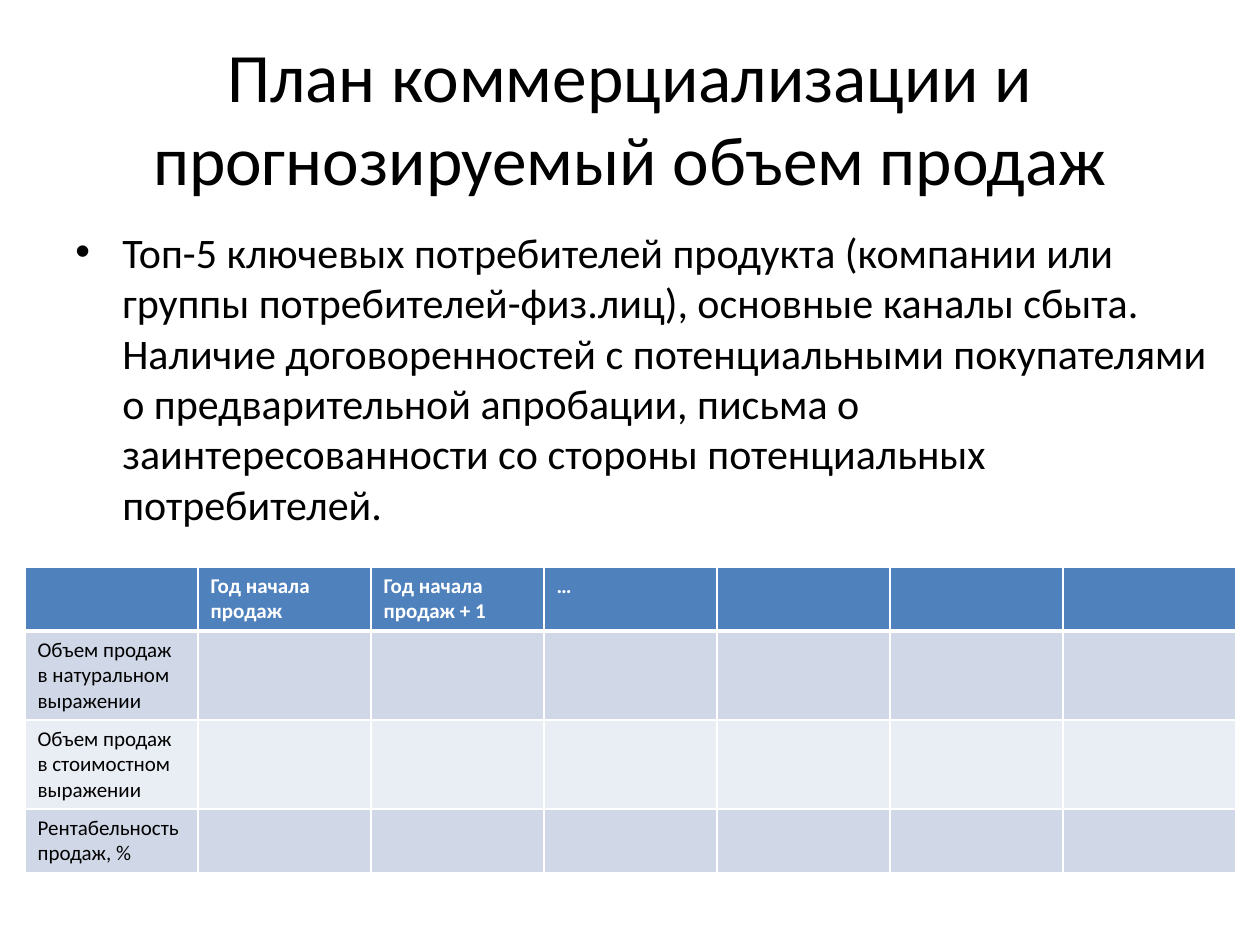
"""Build the commercialization plan slide with its sales forecast table."""
import dataclasses

import lxml.etree
import pptx
import pptx.dml.color
import pptx.enum.text
import pptx.oxml.ns
import pptx.util

EMU_PER_PX = 914400 / 126
COLUMN_COUNT = 7
TITLE = "План коммерциализации и прогнозируемый объем продаж"
BODY = (
    "Топ-5 ключевых потребителей продукта (компании или группы потребителей-физ.лиц), "
    "основные каналы сбыта. Наличие договоренностей с потенциальными покупателями "
    "о предварительной апробации, письма о заинтересованности со стороны "
    "потенциальных потребителей."
)
FORECAST = [
    ["", "Год начала продаж", "Год начала продаж + 1", "…"],
    ["Объем продаж в натуральном выражении"],
    ["Объем продаж в стоимостном выражении"],
    ["Рентабельность продаж, %"],
]
ROW_HEIGHTS = [64, 89, 89, 64]


@dataclasses.dataclass(frozen=True)
class Theme:
    font: str = "Calibri"
    text: str = "000000"
    light: str = "FFFFFF"
    header: str = "4F81BD"
    bands: tuple = ("D0D8E8", "E9EDF4")
    title_size: float = 39.6
    body_size: float = 24
    table_size: float = 12
    border: float = 1
    header_border: float = 3


def px(length):
    return pptx.util.Emu(round(length * EMU_PER_PX))


def rgb(color):
    return pptx.dml.color.RGBColor.from_string(color)


def add_child(parent, tag, **attributes):
    return lxml.etree.SubElement(parent, pptx.oxml.ns.qn(tag), attributes)


class SlideBuilder:
    def __init__(self, slide, theme):
        self.slide = slide
        self.theme = theme

    def add_run(self, paragraph, text, size, color, bold=False):
        run = paragraph.add_run()
        run.text = text
        run.font.name = self.theme.font
        run.font.size = pptx.util.Pt(size)
        run.font.bold = bold
        run.font.color.rgb = rgb(color)

    def add_text(self, box, text, size):
        shape = self.slide.shapes.add_textbox(*map(px, box))
        shape.text_frame.word_wrap = True
        paragraph = shape.text_frame.paragraphs[0]
        self.add_run(paragraph, text, size, self.theme.text)
        return shape.text_frame, paragraph

    def add_title(self, box, text):
        frame, paragraph = self.add_text(box, text, self.theme.title_size)
        frame.vertical_anchor = pptx.enum.text.MSO_ANCHOR.MIDDLE
        paragraph.alignment = pptx.enum.text.PP_ALIGN.CENTER

    def add_bullet(self, box, text, indent):
        paragraph = self.add_text(box, text, self.theme.body_size)[1]
        properties = paragraph._p.get_or_add_pPr()
        properties.set("marL", str(px(indent)))
        properties.set("indent", str(px(-indent)))
        add_child(properties, "a:buFont", typeface="Arial")
        add_child(properties, "a:buChar", char="•")

    def style_cell(self, cell, fill, bottom_width):
        properties = cell._tc.get_or_add_tcPr()
        for side in "LRTB":
            width = bottom_width if side == "B" else self.theme.border
            line = add_child(properties, f"a:ln{side}", w=str(pptx.util.Pt(width)))
            add_child(add_child(line, "a:solidFill"), "a:srgbClr", val=self.theme.light)
        cell.fill.solid()
        cell.fill.fore_color.rgb = rgb(fill)

    def add_table(self, box, rows, row_heights):
        theme = self.theme
        shape = self.slide.shapes.add_table(len(rows), COLUMN_COUNT, *map(px, box))
        table = shape.table
        for row, height in zip(table.rows, row_heights):
            row.height = px(height)
        for row_index, texts in enumerate(rows):
            is_header = row_index == 0
            fill = theme.header if is_header else theme.bands[(row_index - 1) % 2]
            bottom_width = theme.header_border if is_header else theme.border
            color = theme.light if is_header else theme.text
            for column_index in range(COLUMN_COUNT):
                cell = table.cell(row_index, column_index)
                self.style_cell(cell, fill, bottom_width)
                if column_index < len(texts) and texts[column_index]:
                    paragraph = cell.text_frame.paragraphs[0]
                    self.add_run(paragraph, texts[column_index], theme.table_size, color, is_header)


def main():
    presentation = pptx.Presentation()
    presentation.slide_width = px(1260)
    presentation.slide_height = px(945)
    slide = presentation.slides.add_slide(presentation.slide_layouts[6])
    builder = SlideBuilder(slide, Theme())
    builder.add_title((63, 38, 1134, 157), TITLE)
    builder.add_bullet((63, 220, 1172, 624), BODY, 47)
    builder.add_table((25, 567, 1211, sum(ROW_HEIGHTS)), FORECAST, ROW_HEIGHTS)
    presentation.save("out.pptx")


if __name__ == "__main__":
    main()
